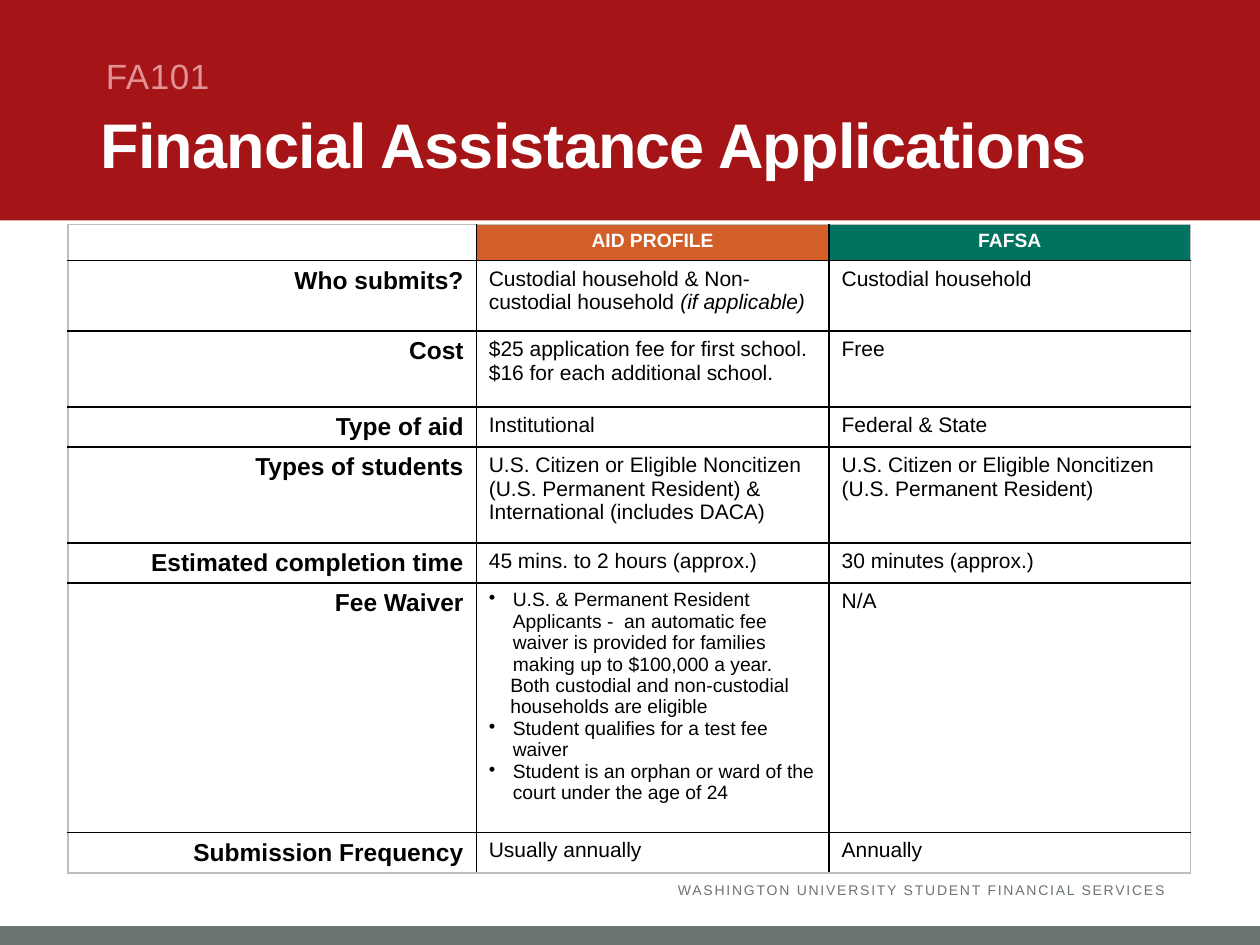
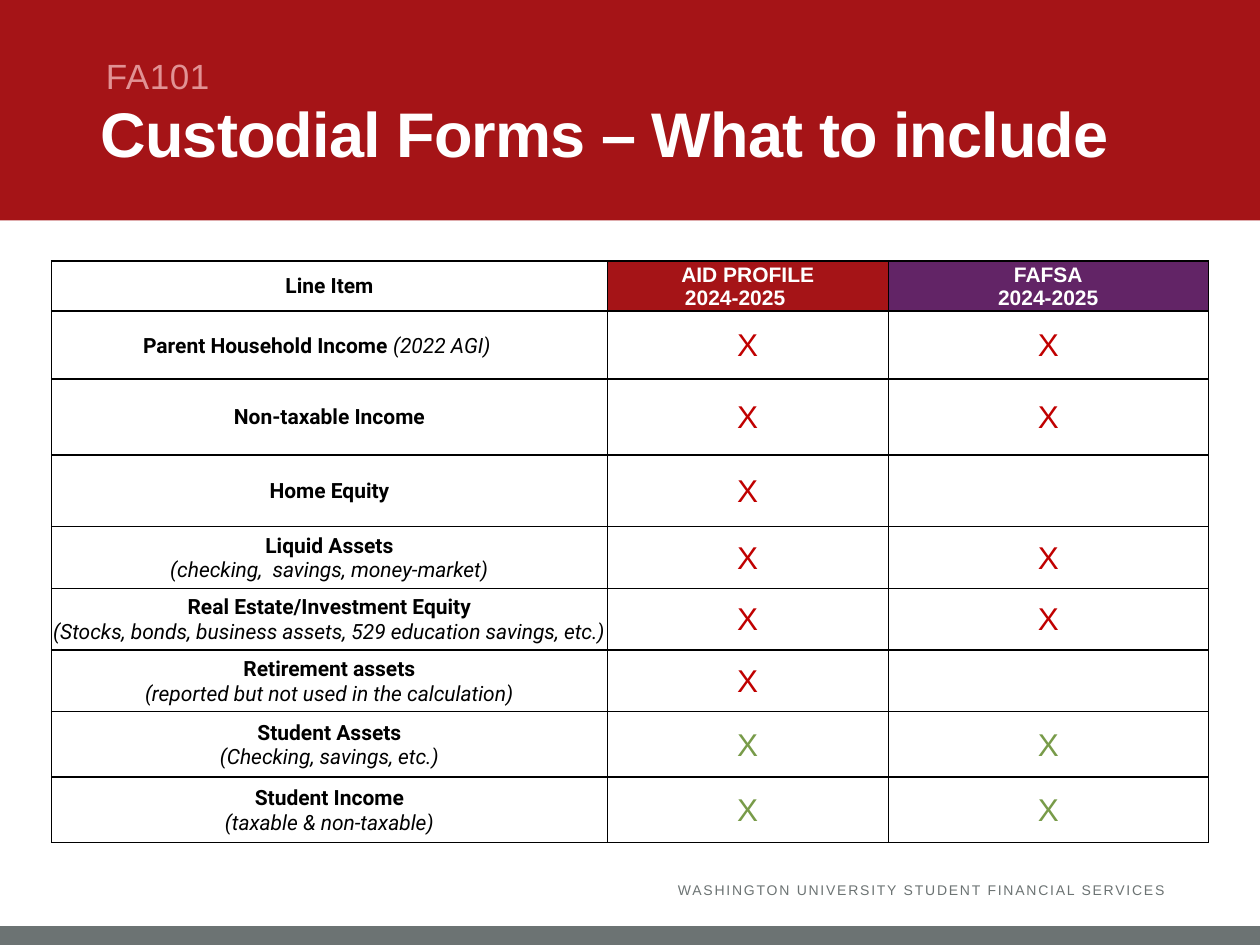
"""Build two financial aid slides that compare application forms in tables."""
import lxml.etree
import pptx
import pptx.dml.color
import pptx.enum.shapes
import pptx.enum.text
import pptx.oxml.ns
import pptx.util

ALIGN = pptx.enum.text.PP_ALIGN
ANCHOR = pptx.enum.text.MSO_ANCHOR
qn = pptx.oxml.ns.qn

THEME = {
    "red": "A51417", "grey": "6C7373", "white": "FFFFFF", "black": "000000",
    "orange": "D15F27", "green": "007360", "purple": "622466", "edge": "BFBFBF",
    "title": {"size": 36, "color": "FFFFFF", "bold": True, "spc": -50, "line": 0.8},
    "course": {"size": 20, "color": "E19294", "spc": 30, "line": 0.9},
    "footer": {"size": 8, "color": "6C7373", "spc": 100, "align": ALIGN.RIGHT},
    "form": {"size": 11, "color": "FFFFFF", "bold": True, "align": ALIGN.CENTER},
    "question": {"size": 14, "bold": True, "align": ALIGN.RIGHT},
    "answer": {"size": 12},
    "waiver": {"size": 11},
    "form year": {"size": 12, "color": "FFFFFF", "bold": True, "align": ALIGN.CENTER},
    "line item": {"size": 12, "bold": True, "font": "Roboto", "align": ALIGN.CENTER},
    "parent mark": {"size": 18, "color": "C00000", "align": ALIGN.CENTER},
    "student mark": {"size": 18, "color": "789B49", "align": ALIGN.CENTER},
}

deck = pptx.Presentation()
deck.slide_width, deck.slide_height = pptx.util.Inches(10), pptx.util.Inches(7.5)
COL, ROW = deck.slide_width / 100, deck.slide_height / 75


def place(left, top, width, height):
    """Turn grid columns and rows into slide lengths."""
    return int(left * COL), int(top * ROW), int(width * COL), int(height * ROW)


def write(frame, lines, style):
    """Write lines in a style; '|' starts italics, '•' a bullet, '>' an indent, '<' a right margin."""
    look = THEME[style]
    for number, line in enumerate(lines):
        paragraph = frame.paragraphs[0] if number == 0 else frame.add_paragraph()
        paragraph.alignment = look.get("align", ALIGN.LEFT)
        paragraph.line_spacing = look.get("line", 1.0)
        paragraph.space_before = paragraph.space_after = pptx.util.Pt(0)
        properties = paragraph._p.get_or_add_pPr()
        margins = {"•": (1.9, -1.9, 0), ">": (1.7, 0, 0), "<": (0, 0, 2)}
        for name, columns in zip(("marL", "indent", "marR"), margins.get(line[:1], (0, 0, 0))):
            properties.set(name, str(int(columns * COL)))
        if line.startswith("•"):
            lxml.etree.SubElement(properties, qn("a:buChar"), char="•")
        else:
            lxml.etree.SubElement(properties, qn("a:buNone"))
        for part, words in enumerate(line.lstrip("•><").split("|")):
            if words:
                run = paragraph.add_run()
                run.text = words
                formats = {"size": pptx.util.Pt(look["size"]), "name": look.get("font", "Arial"),
                           "bold": look.get("bold", False) and part == 0, "italic": part == 1}
                for name, value in formats.items():
                    setattr(run.font, name, value)
                run.font.color.rgb = pptx.dml.color.RGBColor.from_string(look.get("color", THEME["black"]))
                if "spc" in look:
                    run._r.get_or_add_rPr().set("spc", str(look["spc"]))
        if not line:
            lxml.etree.SubElement(paragraph._p, qn("a:endParaRPr"), sz=str(look["size"] * 100))


applications = [
    [[""], ["AID PROFILE"], ["FAFSA"]],
    [["Who submits?"], ["Custodial household & Non-custodial household |(if applicable)"],
     ["Custodial household"]],
    [["Cost"], ["$25 application fee for first school. $16 for each additional school."], ["Free"]],
    [["Type of aid"], ["Institutional"], ["Federal & State"]],
    [["Types of students"],
     ["U.S. Citizen or Eligible Noncitizen (U.S. Permanent Resident) & International (includes DACA)"],
     ["U.S. Citizen or Eligible Noncitizen (U.S. Permanent Resident)"]],
    [["Estimated completion time"], ["45 mins. to 2 hours (approx.)"], ["30 minutes (approx.)"]],
    [["Fee Waiver"],
     ["•U.S. & Permanent Resident Applicants -  an automatic fee waiver is provided for families "
      "making up to $100,000 a year.",
      ">Both custodial and non-custodial",
      ">households are eligible",
      "•Student qualifies for an test fee waiver".replace("an test", "a test"),
      "•Student is an orphan or ward of the court under the age of 24"],
     ["N/A"]],
    [["Submission Frequency"], ["Usually annually"], ["Annually"]],
]
both, profile_only = [["X"], ["X"]], [["X"], [""]]
line_items = [
    [["Line Item"], ["AID PROFILE", "<2024-2025"], ["FAFSA", "2024-2025"]],
    [["<Parent Household Income |(2022 AGI)"], *both],
    [["Non-taxable Income"], *both],
    [["Home Equity"], *profile_only],
    [["Liquid Assets", "|(checking,  savings, money-market)"], *both],
    [["Real Estate/Investment Equity",
      "|(Stocks, bonds, business assets, 529 education savings, etc.)"], *both],
    [["Retirement assets", "|(reported but not used in the calculation)"], *profile_only],
    [["Student Assets", "|(Checking, savings, etc.)"], *both],
    [["Student Income", "|(taxable & non-taxable)"], *both],
]
pages = [
    {"title": "Financial Assistance Applications", "title at": (7.5, 9, 85, 9.3),
     "cells": applications, "corner": (5.4, 17.8), "columns": (32.4, 28, 28.7),
     "rows": (2.8, 5.6, 6, 3.2, 7.6, 3.2, 19.8, 3.2), "header fills": ("white", "orange", "green"),
     "styles": ("form", "question", "answer"), "special": {(6, 1): "waiver"}, "outline": "edge",
     "anchor": ANCHOR.TOP, "insets": (1, 0.5, 1, 0.5)},
    {"title": "Custodial Forms – What to include", "title at": (7.5, 8.2, 89, 9.3),
     "cells": line_items, "corner": (4.1, 20.7), "columns": (44.1, 22.3, 25.4),
     "rows": (4, 5.4, 6, 5.7, 4.9, 4.9, 4.9, 5.2, 5.2), "header fills": ("white", "red", "purple"),
     "styles": ("form year", "line item", "parent mark"), "outline": "black",
     "special": {(0, 0): "line item",
                 **{(row, column): "student mark" for row in (7, 8) for column in (1, 2)}},
     "anchor": ANCHOR.MIDDLE, "insets": (0.1, 0.1, 0.1, 0)},
]
SIDES = ("margin_left", "margin_top", "margin_right", "margin_bottom")

layout = deck.slide_layouts[1]
for unused in [holder for holder in layout.placeholders if holder.placeholder_format.idx >= 10]:
    unused._element.getparent().remove(unused._element)

for page_number, page in enumerate(pages):
    slide = deck.slides.add_slide(layout)
    if page_number == 0:
        for color, area in (("grey", (0, 73.5, 100, 1.5)), ("red", (0, 0, 100, 17.5))):
            band = slide.shapes.add_shape(pptx.enum.shapes.MSO_SHAPE.RECTANGLE, *place(*area))
            band.shadow.inherit = False
            band.fill.solid()
            band.fill.fore_color.rgb = pptx.dml.color.RGBColor.from_string(THEME[color])
            band.line.fill.background()
            layout.shapes._spTree.insert(2, band._element)

    title, course = slide.shapes.title, slide.placeholders[1]
    footer = slide.shapes.add_textbox(*place(50, 68.6, 42.5, 4))
    texts = [
        (title, page["title"], "title", page["title at"], (0.5, 0.5, 1, 0.5), ANCHOR.TOP),
        (course, "FA101", "course", (7.5, 4.2, 85, 3.7), (0.9, 0.5, 1, 0.5), ANCHOR.TOP),
        (footer, "WASHINGTON UNIVERSITY STUDENT FINANCIAL SERVICES", "footer",
         (50, 68.6, 42.5, 4), (0, 0, 0, 0), ANCHOR.MIDDLE),
    ]
    for holder, words, style, area, insets, anchor in texts:
        holder.left, holder.top, holder.width, holder.height = place(*area)
        formats = {"word_wrap": True, "auto_size": pptx.enum.text.MSO_AUTO_SIZE.NONE,
                   "vertical_anchor": anchor,
                   **{side: int(inset * COL) for side, inset in zip(SIDES, insets)}}
        for name, value in formats.items():
            setattr(holder.text_frame, name, value)
        write(holder.text_frame, [words], style)

    last_row, last_column = len(page["rows"]) - 1, len(page["columns"]) - 1
    comparison = slide.shapes.add_table(
        last_row + 1, last_column + 1,
        *place(*page["corner"], sum(page["columns"]), sum(page["rows"]))).table
    comparison.first_row = comparison.horz_banding = False
    for column, width in zip(comparison.columns, page["columns"]):
        column.width = int(width * COL)
    for row, height in zip(comparison.rows, page["rows"]):
        row.height = int(height * ROW)

    header_style, label_style, value_style = page["styles"]
    for r, entries in enumerate(page["cells"]):
        for c, lines in enumerate(entries):
            cell = comparison.cell(r, c)
            style = header_style if r == 0 else label_style if c == 0 else value_style
            write(cell.text_frame, lines, page["special"].get((r, c), style))
            cell.vertical_anchor = page["anchor"]
            for side, inset in zip(SIDES, page["insets"]):
                setattr(cell, side, int(inset * COL))
            borders = {"a:lnL": c == 0, "a:lnR": c == last_column,
                       "a:lnT": r == 0, "a:lnB": r == last_row}
            for tag, outer in borders.items():
                border = lxml.etree.SubElement(cell._tc.get_or_add_tcPr(), qn(tag), w="12700")
                paint = lxml.etree.SubElement(border, qn("a:solidFill"))
                lxml.etree.SubElement(paint, qn("a:srgbClr"),
                                      val=THEME[page["outline"] if outer else "black"])
            cell.fill.solid()
            fill = page["header fills"][c] if r == 0 else "white"
            cell.fill.fore_color.rgb = pptx.dml.color.RGBColor.from_string(THEME[fill])

deck.save("out.pptx")
